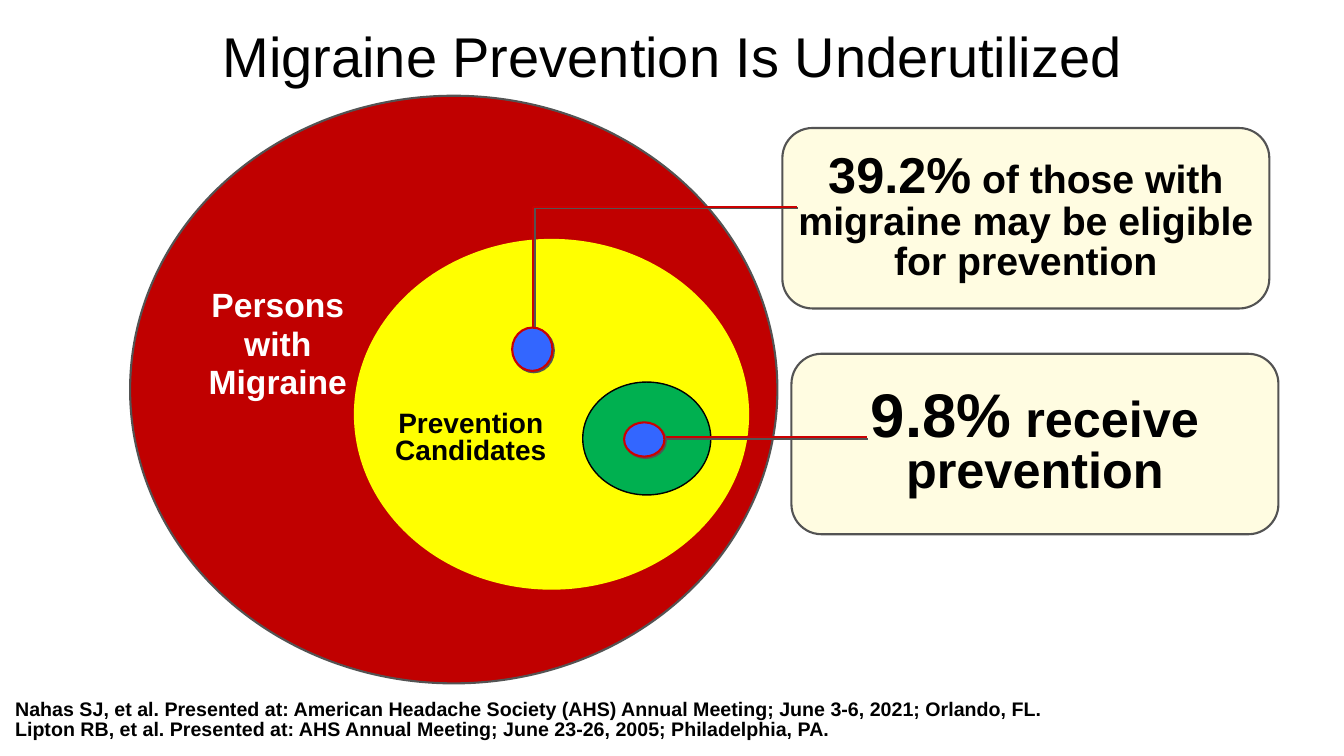
from lxml.etree import SubElement
from pptx import Presentation
from pptx.dml.color import RGBColor
from pptx.enum.shapes import MSO_CONNECTOR, MSO_SHAPE
from pptx.enum.text import MSO_ANCHOR, MSO_AUTO_SIZE, PP_ALIGN
from pptx.oxml.ns import qn
from pptx.util import Pt

PX = 9144
SLIDE_SIZE = (1333, 750)
BLACK, WHITE, GRAY, RED = "000000", "FFFFFF", "535353", "CC0000"

TITLE = "Migraine Prevention Is Underutilized"
REFERENCES = (
    "Nahas SJ, et al. Presented at: American Headache Society (AHS) Annual Meeting; "
    "June 3-6, 2021; Orlando, FL. Lipton RB, et al. Presented at: AHS Annual Meeting; "
    "June 23-26, 2005; Philadelphia, PA."
)
POPULATIONS = [
    ((129, 95, 642, 583), "C00000", GRAY, 1.5),
    ((351, 237, 392, 348), "FFFF00", None, 0),
    ((578, 379, 127, 112), "00B050", BLACK, 1),
]
CALLOUTS = [
    ((776, 127, 483, 179), 0, 0.85,
     [("39.2%", 36), (" of those with migraine may be eligible for prevention", 28)]),
    ((785, 351, 483, 179), 10, 0.8,
     [("9.8%", 44), (" receive prevention", 36)]),
]
POINTERS = [
    ([(529, 362), (529, 205), (790, 205)], (508, 325, 40, 43)),
    ([(659, 434), (860, 434)], (619, 419, 40, 34)),
]
LABELS = [
    ((369, 404, 196, 64), ["Prevention", "Candidates"], 20, BLACK, 0.8),
    ((181, 280, 189, 125), ["Persons", "with", "Migraine"], 24, WHITE, 0.95),
]


def emu(values):
    return [value * PX for value in values]


def color(value):
    return RGBColor.from_string(value)


def place(shape, box):
    shape.left, shape.top, shape.width, shape.height = emu(box)


def write(shape, paragraphs, ink=BLACK, bold=True, align=PP_ALIGN.CENTER,
          anchor=MSO_ANCHOR.MIDDLE, spacing=0.9, insets=(10, 5),
          fit=MSO_AUTO_SIZE.NONE):
    frame = shape.text_frame
    frame.word_wrap = True
    frame.auto_size = fit
    frame.vertical_anchor = anchor
    frame.margin_left = frame.margin_right = insets[0] * PX
    frame.margin_top = frame.margin_bottom = insets[1] * PX
    for index, runs in enumerate(paragraphs):
        paragraph = frame.add_paragraph() if index else frame.paragraphs[0]
        paragraph.alignment = align
        paragraph.line_spacing = spacing
        paragraph.space_before = Pt(0)
        for text, size in runs:
            run = paragraph.add_run()
            run.text = text
            run.font.name = "Arial"
            run.font.size = Pt(size)
            run.font.bold = bold
            run.font.color.rgb = color(ink)


def add_panel(slide, kind, box, fill, line, width):
    shape = slide.shapes.add_shape(kind, *emu(box))
    shape.shadow.inherit = False
    shape.fill.solid()
    shape.fill.fore_color.rgb = color(fill)
    if line:
        shape.line.color.rgb = color(line)
        shape.line.width = Pt(width)
    else:
        shape.line.fill.background()
    return shape


def add_shadow(shape):
    properties = shape._element.spPr
    effects = properties.find(qn("a:effectLst"))
    if effects is None:
        effects = SubElement(properties, qn("a:effectLst"))
    shadow = SubElement(effects, qn("a:outerShdw"), dist=str(Pt(1.4)),
                        dir="2700000", algn="ctr", rotWithShape="0")
    SubElement(shadow, qn("a:srgbClr"), val=GRAY)


def add_pointer(slide, points, dot_box):
    for start, end in zip(points, points[1:]):
        connector = slide.shapes.add_connector(
            MSO_CONNECTOR.STRAIGHT, *emu(start + end))
        connector.line.color.rgb = color(RED)
        connector.line.width = Pt(1.5)
        add_shadow(connector)
    add_shadow(add_panel(slide, MSO_SHAPE.OVAL, dot_box, "3366FF", RED, 1.5))


def main():
    presentation = Presentation()
    presentation.slide_width, presentation.slide_height = emu(SLIDE_SIZE)
    slide = presentation.slides.add_slide(presentation.slide_layouts[1])

    title, references = slide.placeholders
    place(title, (0, 0, 1333, 117))
    write(title, [[(TITLE, 40)]], bold=False, insets=(5, 5))

    place(references, (0, 692, 1092, 58))
    properties = references.text_frame.paragraphs[0]._p.get_or_add_pPr()
    properties.set("marL", "0")
    properties.set("indent", "0")
    SubElement(properties, qn("a:buNone"))
    write(references, [[(REFERENCES, 14)]], align=PP_ALIGN.LEFT,
          anchor=MSO_ANCHOR.BOTTOM, spacing=0.85, insets=(15, 15))

    for box, fill, line, width in POPULATIONS:
        add_panel(slide, MSO_SHAPE.OVAL, box, fill, line, width)

    for box, side_inset, spacing, runs in CALLOUTS:
        callout = add_panel(slide, MSO_SHAPE.ROUNDED_RECTANGLE, box, "FFFCE1", GRAY, 1.5)
        write(callout, [runs], spacing=spacing, insets=(side_inset, 5))

    for points, dot_box in POINTERS:
        add_pointer(slide, points, dot_box)

    for box, lines, size, ink, spacing in LABELS:
        label = slide.shapes.add_textbox(*emu(box))
        write(label, [[(line, size)] for line in lines], ink=ink, spacing=spacing,
              anchor=MSO_ANCHOR.TOP, fit=MSO_AUTO_SIZE.SHAPE_TO_FIT_TEXT)

    presentation.save("out.pptx")


if __name__ == "__main__":
    main()
